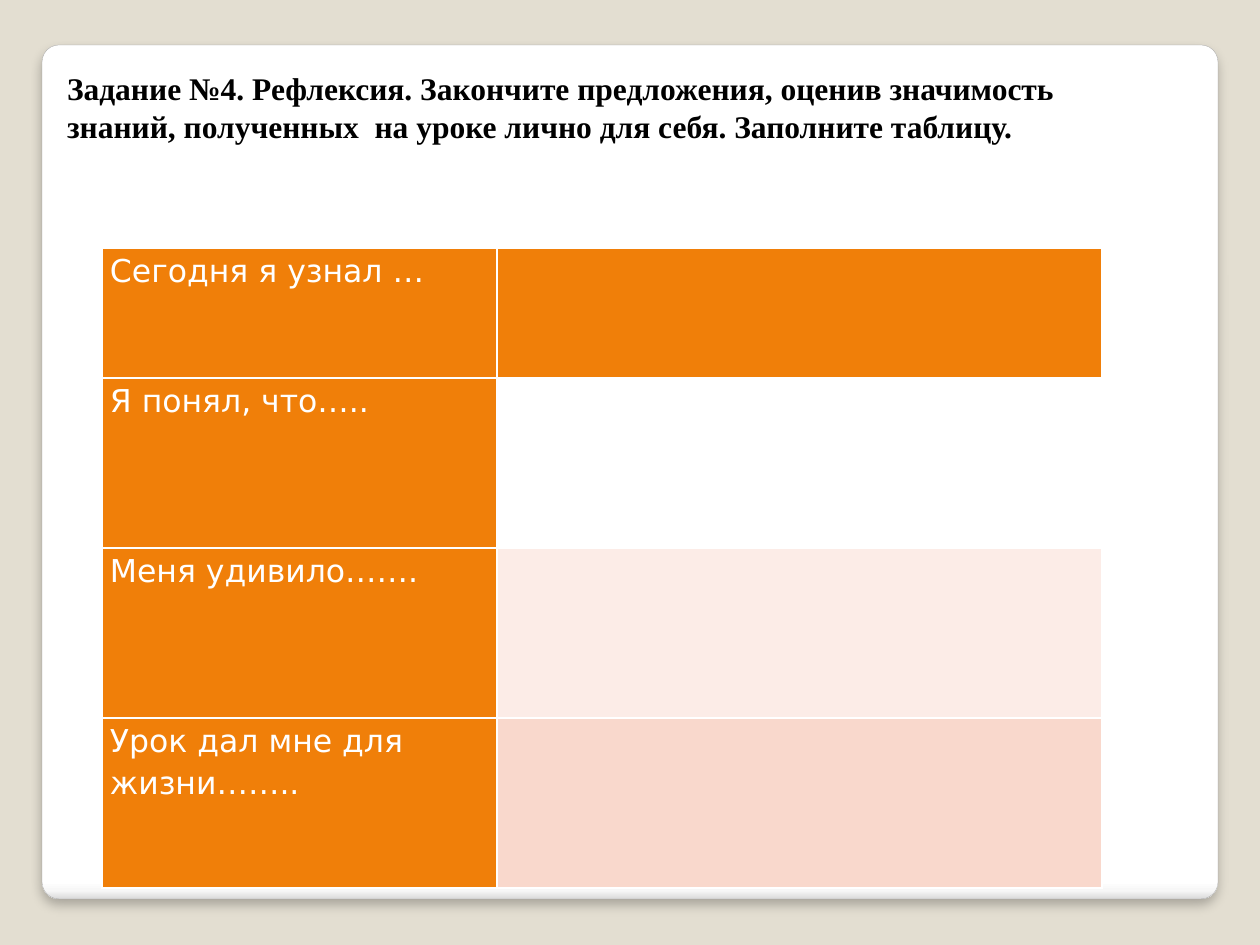
"""Build the lesson reflection slide with its sentence-completion table."""
from dataclasses import dataclass

from lxml import etree
from pptx import Presentation
from pptx import util as u
from pptx.dml.color import RGBColor
from pptx.enum import shapes, text
from pptx.oxml import parse_xml
from pptx.oxml.ns import nsdecls, qn


@dataclass(frozen=True)
class Theme:
    backdrop: str = "E3DED1"
    edge: str = "A4A4A4"
    white: str = "FFFFFF"
    ink: str = "000000"
    accent: str = "F07F09"
    light_band: str = "FCECE7"
    dark_band: str = "F9D8CC"
    heading_font: str = "Times New Roman"
    table_font: str = "DejaVu Sans"
    size: int = 18


theme = Theme()
PX = u.Inches(1) / 126


def px(length):
    return u.Emu(round(length * PX))


def style(paragraph, font_name, color, bold):
    font = paragraph.font
    font.name, font.size, font.bold = font_name, u.Pt(theme.size), bold
    font.color.rgb = RGBColor.from_string(color)


prs = Presentation()
prs.slide_width, prs.slide_height = px(1260), px(945)
slide = prs.slides.add_slide(prs.slide_layouts[5])
slide.background.fill.solid()
slide.background.fill.fore_color.rgb = RGBColor.from_string(theme.backdrop)

card = slide.shapes.add_shape(
    shapes.MSO_SHAPE.ROUNDED_RECTANGLE, px(42), px(45), px(1176), px(854))
card.adjustments[0] = 0.02
card.line.color.rgb = RGBColor.from_string(theme.edge)
card.line.width = u.Pt(0.16)
card.fill.gradient()
card.fill.gradient_angle = 270
stops = card._element.spPr.find(".//" + qn("a:gsLst"))
for stop in list(stops):
    stops.remove(stop)
for percent, color in ((0, theme.white), (98, theme.white), (99, "F7F7F7"), (100, "DADADA")):
    stop = etree.SubElement(stops, qn("a:gs"), pos=str(percent * 1000))
    etree.SubElement(stop, qn("a:srgbClr"), val=color)
card.shadow.inherit = False
card._element.spPr.find(qn("a:effectLst")).append(parse_xml(
    f'<a:outerShdw {nsdecls("a")} blurRad="{u.Pt(6)}" dist="{u.Pt(4)}" dir="5400000" '
    f'algn="ctr" rotWithShape="0"><a:srgbClr val="{theme.ink}">'
    '<a:alpha val="25000"/></a:srgbClr></a:outerShdw>'))
slide.shapes._spTree.insert(2, card._element)

task = slide.shapes.title
task.left, task.top, task.width, task.height = px(54), px(63), px(1031), px(127)
frame = task.text_frame
frame.text = (
    "Задание №4. Рефлексия. Закончите предложения, оценив значимость\n"
    "знаний, полученных  на уроке лично для себя. Заполните таблицу.")
frame.word_wrap = False
frame.auto_size = text.MSO_AUTO_SIZE.NONE
frame.vertical_anchor = text.MSO_ANCHOR.TOP
frame.margin_left = frame.margin_right = px(13)
frame.margin_top = frame.margin_bottom = px(6)
for line in frame.paragraphs:
    line.alignment = text.PP_ALIGN.LEFT
    style(line, theme.heading_font, theme.ink, True)

prompts = [
    ("Сегодня я узнал …", theme.accent),
    ("Я понял, что…..", None),
    ("Меня удивило…….", theme.light_band),
    ("Урок дал мне для жизни……..", theme.dark_band),
]
heights = [130, 170, 170, 170]
widths = [395, 605]
reflection = slide.shapes.add_table(
    len(heights), len(widths), px(102), px(248), px(sum(widths)), px(sum(heights))).table
reflection.first_row = reflection.horz_banding = False
for column, width in zip(reflection.columns, widths):
    column.width = px(width)

for row, height, (prompt, answer_fill) in zip(reflection.rows, heights, prompts):
    row.height = px(height)
    for cell, words, fill in zip(row.cells, (prompt, ""), (theme.accent, answer_fill)):
        cell.text = words
        cell.margin_left = cell.margin_right = px(8)
        cell.margin_top = cell.margin_bottom = 0
        sentence = cell.text_frame.paragraphs[0]
        sentence.line_spacing = 1.15
        style(sentence, theme.table_font, theme.white, False)
        borders = cell._tc.get_or_add_tcPr()
        for side in ("lnL", "lnR", "lnT", "lnB"):
            border = etree.SubElement(borders, qn(f"a:{side}"), w=str(u.Pt(1)))
            paint = etree.SubElement(border, qn("a:solidFill"))
            etree.SubElement(paint, qn("a:srgbClr"), val=theme.white)
        if fill:
            cell.fill.solid()
            cell.fill.fore_color.rgb = RGBColor.from_string(fill)
        else:
            cell.fill.background()

prs.save("out.pptx")
